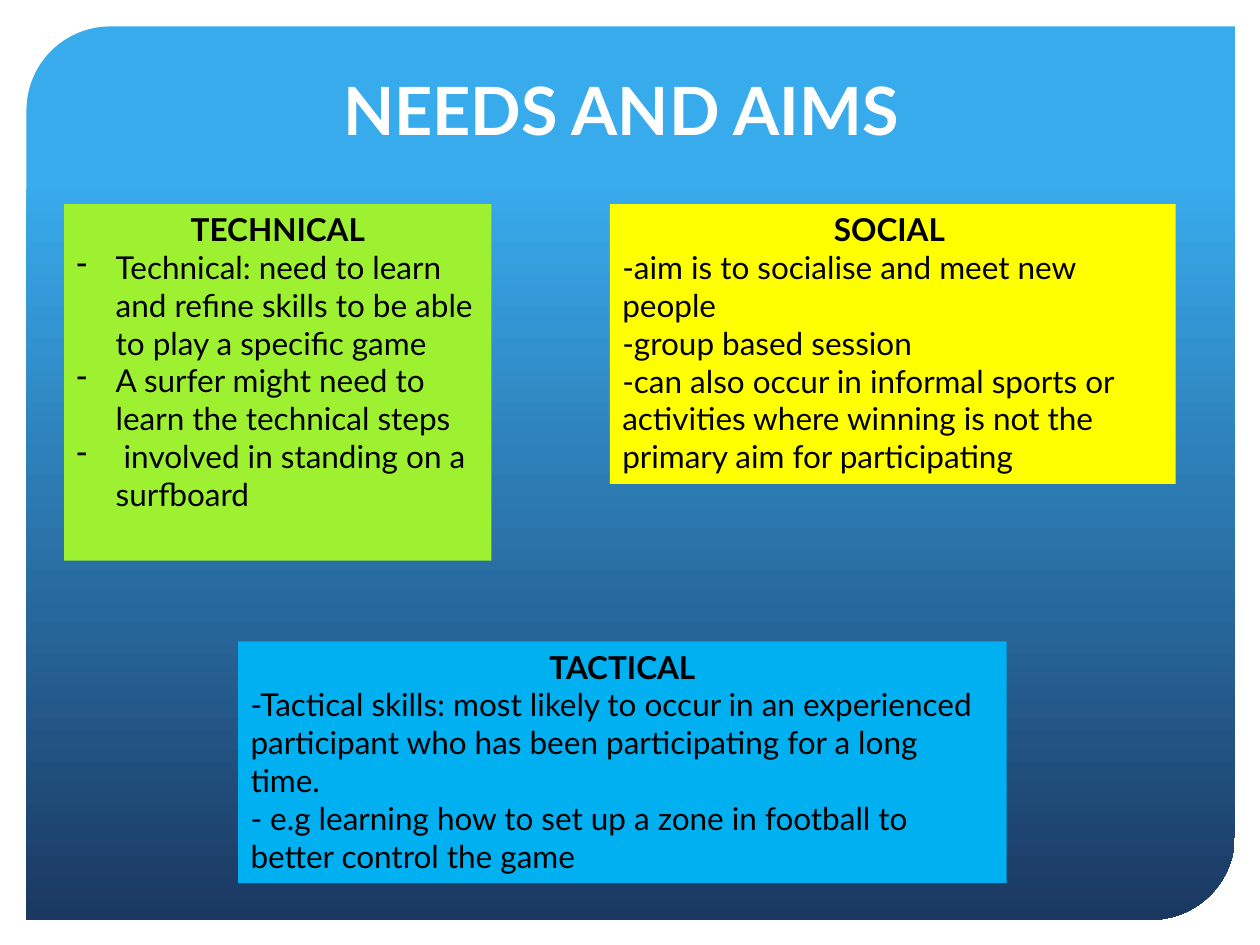
import pptx
import pptx.util
from pptx.dml.color import RGBColor
from pptx.enum.shapes import MSO_SHAPE
from pptx.enum.text import MSO_ANCHOR, PP_ALIGN
from pptx.oxml.ns import qn
from lxml import etree

Inches, Pt = pptx.util.Inches, pptx.util.Pt

FONT = "Lato"
WHITE = RGBColor(0xFF, 0xFF, 0xFF)
BLACK = RGBColor(0, 0, 0)
SKY = RGBColor(0x38, 0xAB, 0xED)
NAVY = RGBColor(0x1B, 0x38, 0x61)
GREEN = RGBColor(0x9D, 0xF1, 0x31)
BLUE = RGBColor(0x00, 0xB0, 0xF0)
YELLOW = RGBColor(0xFF, 0xFF, 0x00)

TITLE = "NEEDS AND AIMS "
# heading, fill, (left, top, width, height), bulleted, lines
CARDS = [
    ("TECHNICAL", GREEN, (0.51, 1.62, 3.39, 2.83), True, [
        "Technical: need to learn and refine skills to be able to play a specific game",
        "A surfer might need to learn the technical steps",
        " involved in standing on a surfboard",
    ]),
    ("TACTICAL", BLUE, (1.89, 5.09, 6.1, 1.92), False, [
        "-Tactical skills: most likely to occur in an experienced participant "
        "who has been participating for a long time.",
        "- e.g learning how to set up a zone in football to better control the game",
    ]),
    ("SOCIAL ", YELLOW, (4.84, 1.62, 4.49, 2.22), False, [
        "-aim is to socialise and meet new people",
        "-group based session",
        "-can also occur in informal sports or activities where winning is not the",
        "primary aim for participating",
    ]),
]


def write(para, text, size, color, bold, align):
    para.alignment = align
    run = para.add_run()
    run.text = text
    font = run.font
    font.name, font.size, font.bold = FONT, Pt(size), bold
    font.color.rgb = color


def add_dash(para):
    """Give the paragraph a hanging dash bullet."""
    props = para._p.get_or_add_pPr()
    props.set("marL", str(Inches(0.31)))
    props.set("indent", str(-Inches(0.31)))
    etree.SubElement(props, qn("a:buFontTx"))
    etree.SubElement(props, qn("a:buChar")).set("char", "-")


def add_shape(slide, kind, box):
    shape = slide.shapes.add_shape(kind, *map(Inches, box))
    shape.shadow.inherit = False
    shape.line.fill.background()
    return shape


def add_panel(slide):
    """Add the gradient panel behind everything else."""
    panel = add_shape(slide, MSO_SHAPE.ROUND_2_DIAG_RECTANGLE,
                      (0.21, 0.21, 9.59, 7.09))
    panel.adjustments[0] = 0.094
    panel.adjustments[1] = 0
    panel.fill.gradient()
    panel.fill.gradient_angle = 270
    stops = panel.fill.gradient_stops
    for stop, (place, color) in zip(stops, [(0.17, SKY), (1, NAVY)]):
        stop.position = place
        stop.color.rgb = color
    slide.shapes._spTree.insert(2, panel._element)


def add_title(slide):
    title = slide.shapes.title
    title.left, title.top = Inches(0.85), Inches(0.42)
    title.width, title.height = Inches(8.29), Inches(0.81)
    frame = title.text_frame
    frame.vertical_anchor = MSO_ANCHOR.BOTTOM
    write(frame.paragraphs[0], TITLE, 38, WHITE, True, PP_ALIGN.CENTER)


def add_card(slide, head, fill, box, dashed, lines):
    card = add_shape(slide, MSO_SHAPE.RECTANGLE, box)
    card.fill.solid()
    card.fill.fore_color.rgb = fill
    frame = card.text_frame
    frame.word_wrap = True
    frame.vertical_anchor = MSO_ANCHOR.TOP
    write(frame.paragraphs[0], head, 18, BLACK, True, PP_ALIGN.CENTER)
    for line in lines:
        para = frame.add_paragraph()
        if dashed:
            add_dash(para)
        write(para, line, 18, BLACK, False, PP_ALIGN.LEFT)


def main():
    deck = pptx.Presentation()
    deck.slide_width, deck.slide_height = Inches(10), Inches(7.5)
    slide = deck.slides.add_slide(deck.slide_layouts[5])
    add_panel(slide)
    add_title(slide)
    for card in CARDS:
        add_card(slide, *card)
    deck.save("out.pptx")


if __name__ == "__main__":
    main()
